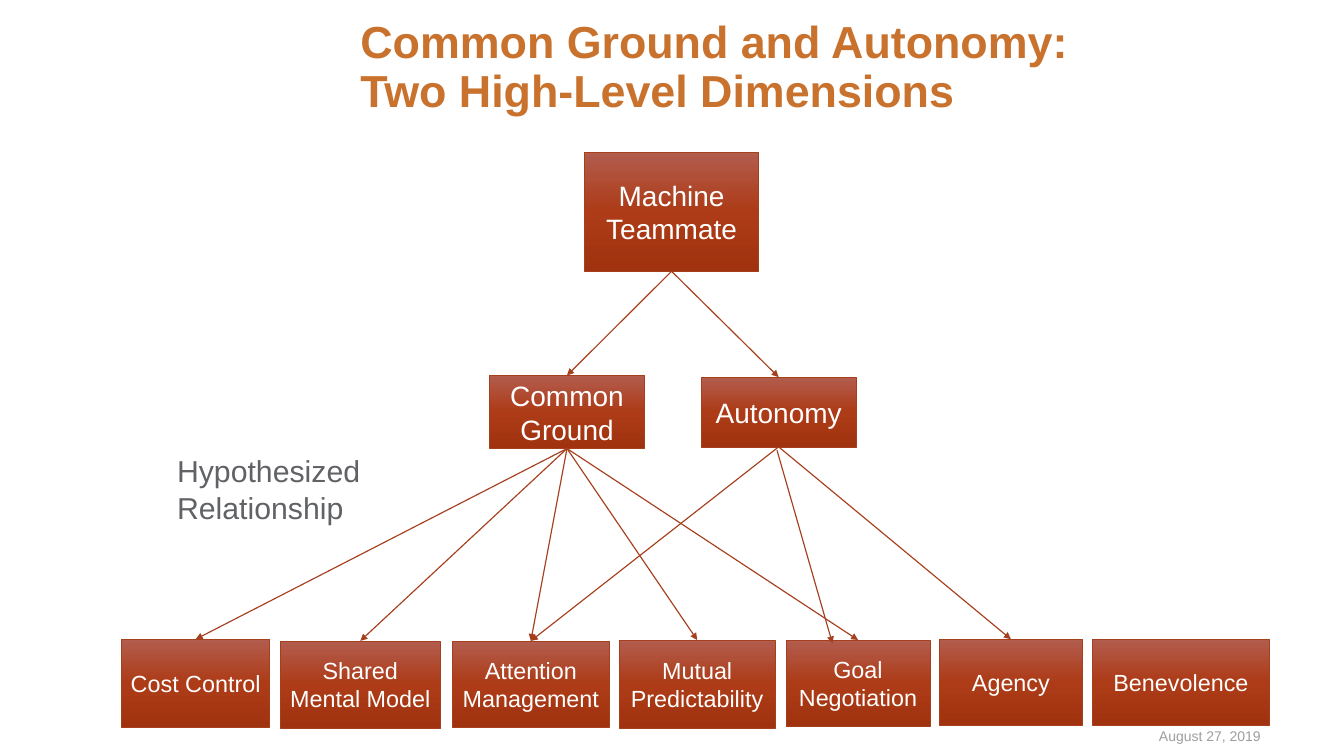
from dataclasses import dataclass

from lxml import etree
from pptx import Presentation
from pptx.dml.color import RGBColor
from pptx.enum.shapes import MSO_CONNECTOR, MSO_SHAPE
from pptx.enum.text import MSO_ANCHOR, MSO_AUTO_SIZE, PP_ALIGN
from pptx.oxml.ns import qn
from pptx.util import Inches, Pt

RECTANGLE = MSO_SHAPE.RECTANGLE
STRAIGHT = MSO_CONNECTOR.STRAIGHT
LEFT, CENTER, RIGHT = PP_ALIGN.LEFT, PP_ALIGN.CENTER, PP_ALIGN.RIGHT
TOP, MIDDLE, BOTTOM = MSO_ANCHOR.TOP, MSO_ANCHOR.MIDDLE, MSO_ANCHOR.BOTTOM
NO_AUTOFIT = MSO_AUTO_SIZE.NONE
TOP_SITE, BOTTOM_SITE = 0, 2

TITLE = "Common Ground and Autonomy:\vTwo High-Level Dimensions"
TITLE_AREA = (4.29, 0.3, 8.91, 1.14)
DATE = "August 27, 2019"
DATE_AREA = (11.71, 8.52, 3.4, 0.48)
NOTE = "Hypothesized\nRelationship"
NOTE_AREA = (2.01, 5.34, 2.4, 0.97)

UPPER_BOXES = [
    ("Machine\nTeammate", (6.96, 1.81, 2.07, 1.42)),
    ("Common\nGround", (5.83, 4.47, 1.84, 0.87)),
    ("Autonomy", (8.35, 4.49, 1.84, 0.83)),
]
FACTOR_BOXES = [
    ("Cost Control", (1.45, 7.61, 1.76, 1.05)),
    ("Shared Mental Model", (3.34, 7.63, 1.9, 1.04)),
    ("Attention Management", (5.38, 7.63, 1.88, 1.03)),
    ("Mutual Predictability", (7.37, 7.62, 1.86, 1.05)),
    ("Goal Negotiation", (9.36, 7.62, 1.71, 1.03)),
    ("Agency", (11.18, 7.61, 1.71, 1.02)),
    ("Benevolence", (13.01, 7.61, 2.1, 1.02)),
]
LINKS = {
    "Machine\nTeammate": ["Common\nGround", "Autonomy"],
    "Common\nGround": [
        "Cost Control", "Shared Mental Model", "Attention Management",
        "Mutual Predictability", "Goal Negotiation",
    ],
    "Autonomy": ["Attention Management", "Agency"],
}
AUTONOMY_TO_GOAL = (9.25, 5.36, 9.91, 7.66)


@dataclass(frozen=True)
class Theme:
    font: str = "Arial"
    title: str = "C8722E"
    date: str = "9E9E9F"
    note: str = "616265"
    box_text: str = "FFFFFF"
    line: str = "A63F1E"
    gradient: tuple = ((0, "B25D4E"), (50, "AD3B17"), (100, "A0320F"))
    title_size: float = 38.4
    note_size: float = 25.9
    upper_size: float = 24
    factor_size: float = 20
    date_size: float = 12


THEME = Theme()


def inches(values):
    return [Inches(value) for value in values]


def write_text(shape, text, *, size, color, bold=False, align=LEFT,
               anchor=TOP, spacing=1.0, wrap=True, inset=0.1):
    frame = shape.text_frame
    frame.auto_size = NO_AUTOFIT
    frame.word_wrap = wrap
    frame.vertical_anchor = anchor
    frame.margin_left = Inches(inset)
    frame.text = text
    for paragraph in frame.paragraphs:
        paragraph.alignment = align
        paragraph.line_spacing = spacing
        for run in paragraph.runs:
            run.font.name = THEME.font
            run.font.size = Pt(size)
            run.font.bold = bold
            run.font.color.rgb = RGBColor.from_string(color)


def fill_gradient(shape):
    shape.fill.gradient()
    gradient = shape._element.spPr.find(qn("a:gradFill"))
    stops = gradient.find(qn("a:gsLst"))
    for stop in list(stops):
        stops.remove(stop)
    for position, color in THEME.gradient:
        stop = etree.SubElement(stops, qn("a:gs"), pos=str(position * 1000))
        etree.SubElement(stop, qn("a:srgbClr"), val=color)
    gradient.find(qn("a:lin")).set("ang", str(90 * 60000))


def add_box(slide, text, area, size):
    shape = slide.shapes.add_shape(RECTANGLE, *inches(area))
    shape.shadow.inherit = False
    fill_gradient(shape)
    shape.line.color.rgb = RGBColor.from_string(THEME.line)
    shape.line.width = Pt(0.5)
    write_text(shape, text, size=size, color=THEME.box_text,
               align=CENTER, anchor=MIDDLE)
    return shape


def add_arrow(slide, points):
    connector = slide.shapes.add_connector(STRAIGHT, *inches(points))
    connector.line.color.rgb = RGBColor.from_string(THEME.line)
    connector.line.width = Pt(1)
    etree.SubElement(connector.line._get_or_add_ln(), qn("a:tailEnd"), type="triangle")
    etree.SubElement(connector._element.spPr, qn("a:effectLst"))
    return connector


def main():
    presentation = Presentation()
    presentation.slide_width = Inches(16)
    presentation.slide_height = Inches(9)
    slide = presentation.slides.add_slide(presentation.slide_layouts[5])

    title = slide.shapes.title
    title.left, title.top, title.width, title.height = inches(TITLE_AREA)
    write_text(title, TITLE, size=THEME.title_size, color=THEME.title,
               bold=True, anchor=BOTTOM, spacing=0.9, inset=0)

    date = slide.shapes.add_textbox(*inches(DATE_AREA))
    write_text(date, DATE, size=THEME.date_size, color=THEME.date,
               align=RIGHT, anchor=MIDDLE)

    boxes = {}
    for group, size in ((UPPER_BOXES, THEME.upper_size),
                        (FACTOR_BOXES, THEME.factor_size)):
        for text, area in group:
            boxes[text] = add_box(slide, text, area, size)

    for source, targets in LINKS.items():
        for target in targets:
            arrow = add_arrow(slide, (0, 0, 0, 0))
            arrow.begin_connect(boxes[source], BOTTOM_SITE)
            arrow.end_connect(boxes[target], TOP_SITE)
    add_arrow(slide, AUTONOMY_TO_GOAL)

    note = slide.shapes.add_textbox(*inches(NOTE_AREA))
    write_text(note, NOTE, size=THEME.note_size, color=THEME.note, wrap=False)

    presentation.save("out.pptx")


if __name__ == "__main__":
    main()
